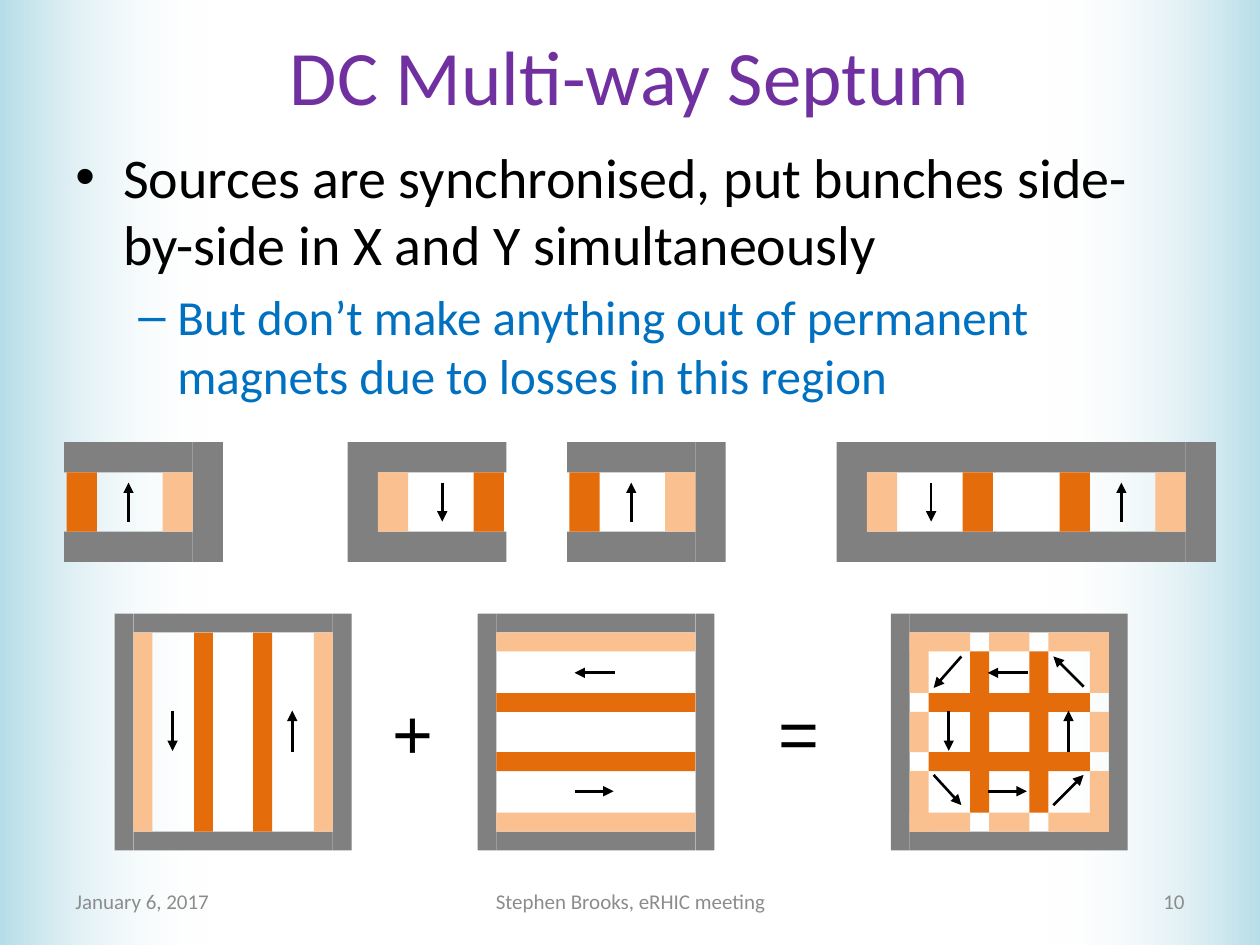
from dataclasses import dataclass

from lxml.etree import SubElement
from pptx import Presentation
from pptx.dml.color import RGBColor
from pptx.enum.shapes import MSO_CONNECTOR, MSO_SHAPE
from pptx.enum.text import MSO_ANCHOR, PP_ALIGN
from pptx.oxml.ns import qn
from pptx.util import Inches, Pt

COLORS = {
    "yoke": "808080", "septum": "E46C0A", "coil": "FAC090", "edge": "B7DEE8",
    "white": "FFFFFF", "black": "000000", "title": "7030A0", "sub": "0070C0",
    "footer": "8C8C8C",
}


@dataclass(frozen=True)
class Bar:
    x: float
    y: float
    w: float
    h: float
    color: str

    def mirrored(self, width: float) -> "Bar":
        return Bar(width - self.x - self.w, self.y, self.w, self.h, self.color)

    def transposed(self) -> "Bar":
        return Bar(self.y, self.x, self.h, self.w, self.color)


@dataclass(frozen=True)
class Arrow:
    x1: float
    y1: float
    x2: float
    y2: float


@dataclass(frozen=True)
class Label:
    x: float
    y: float
    w: float
    h: float
    text: str
    size: int
    color: str
    align: PP_ALIGN = PP_ALIGN.LEFT
    font: str = "Calibri"
    wrap: bool = True


@dataclass(frozen=True)
class Bullet:
    text: str
    char: str
    size: int
    color: str
    margin: float
    indent: float


MAGNET_W = 1.26
MAGNET_TOP = 3.51
MAGNET = [
    Bar(0, 0, 1.02, 0.24, "yoke"), Bar(0, 0.71, 1.02, 0.24, "yoke"),
    Bar(1.02, 0, 0.24, 0.95, "yoke"), Bar(0.02, 0.24, 0.24, 0.47, "septum"),
    Bar(0.78, 0.24, 0.24, 0.47, "coil"),
]
MAGNETS = [(0.51, False), (4.5, False), (2.76, True), (8.39, False), (6.64, True)]

T = 0.15
SIZE = 1.88
FRAME = [
    Bar(T, 0, SIZE - 2 * T, T, "yoke"), Bar(T, SIZE - T, SIZE - 2 * T, T, "yoke"),
    Bar(0, 0, T, SIZE, "yoke"), Bar(SIZE - T, 0, T, SIZE, "yoke"),
]
SEPTA = (0.63, 1.1)
COILS = (T, SIZE - 2 * T)
STRIPS = ([Bar(x, T, T, SIZE - 2 * T, "septum") for x in SEPTA]
          + [Bar(x, T, T, SIZE - 2 * T, "coil") for x in COILS])
CROSS = [Bar(x, 2 * T, T, SIZE - 4 * T, "septum") for x in SEPTA]
PADS = [Bar(x, y, T, h, "coil") for x in COILS
        for y, h in ((T, 0.48), (0.78, 0.32), (1.25, 0.48))]
GRID = CROSS + PADS

VERTICAL = [Arrow(0.46, 0.77, 0.46, 1.09), Arrow(1.41, 1.1, 1.41, 0.77)]
HORIZONTAL = [Arrow(1.09, 0.47, 0.77, 0.47), Arrow(0.77, 1.41, 1.08, 1.41)]
DIAGONAL = [
    Arrow(1.53, 0.58, 1.29, 0.34), Arrow(1.29, 1.52, 1.53, 1.28),
    Arrow(0.56, 0.34, 0.34, 0.59), Arrow(0.34, 1.28, 0.56, 1.52),
]
WINDOWS = [
    (0.91, STRIPS, VERTICAL),
    (3.79, [b.transposed() for b in STRIPS], HORIZONTAL),
    (7.07, GRID + [b.transposed() for b in GRID], VERTICAL + HORIZONTAL + DIAGONAL),
]
WINDOW_TOP = 4.87

LABELS = [
    Label(0.5, -0.03, 9, 1.25, "DC Multi-way Septum", 44, "title", PP_ALIGN.CENTER),
    Label(0.5, 6.95, 2.33, 0.4, "January 6, 2017", 12, "footer"),
    Label(3.42, 6.95, 3.17, 0.4, "Stephen Brooks, eRHIC meeting", 12, "footer",
          PP_ALIGN.CENTER),
    Label(7.17, 6.95, 2.33, 0.4, "10", 12, "footer", PP_ALIGN.RIGHT),
    Label(3.02, 5.42, 0.53, 0.77, "+", 40, "black", font="Arial", wrap=False),
    Label(6.08, 5.42, 0.53, 0.77, "=", 40, "black", font="Arial", wrap=False),
]
BULLETS = [
    Bullet("Sources are synchronised, put bunches side-by-side in X and Y simultaneously",
           "•", 32, "black", 0.38, -0.38),
    Bullet("But don’t make anything out of permanent magnets due to losses in this region",
           "–", 28, "sub", 0.81, -0.31),
]


def rgb(name: str) -> RGBColor:
    return RGBColor.from_string(COLORS[name])


def add_rect(s, x: float, y: float, w: float, h: float):
    sp = s.shapes.add_shape(MSO_SHAPE.RECTANGLE, Inches(x), Inches(y), Inches(w), Inches(h))
    sp.shadow.inherit = False
    sp.line.fill.background()
    return sp


def add_fade(s, x: float, rotation: int) -> None:
    sp = add_rect(s, x, 0, 1.69, 7.5)
    sp.rotation = rotation
    sp.fill.gradient()
    sp.fill.gradient_angle = 0
    for stop, name, position in zip(sp.fill.gradient_stops, ("edge", "white"), (0, 1)):
        stop.color.rgb = rgb(name)
        stop.position = position
    clear = sp.fill._xPr.findall(".//" + qn("a:srgbClr"))[-1]
    SubElement(clear, qn("a:alpha"), val="0")


def add_bars(s, left: float, top: float, bars: list[Bar]) -> None:
    for b in bars:
        sp = add_rect(s, left + b.x, top + b.y, b.w, b.h)
        sp.fill.solid()
        sp.fill.fore_color.rgb = rgb(b.color)


def add_arrows(s, left: float, top: float, arrows: list[Arrow]) -> None:
    for a in arrows:
        c = s.shapes.add_connector(
            MSO_CONNECTOR.STRAIGHT, Inches(left + a.x1), Inches(top + a.y1),
            Inches(left + a.x2), Inches(top + a.y2))
        c.line.color.rgb = rgb("black")
        c.line.width = Pt(1.5)
        SubElement(c.line._get_or_add_ln(), qn("a:tailEnd"), type="triangle")
        SubElement(c._element.spPr, qn("a:effectLst"))


def style_run(p, size: int, color: str, font: str = "Calibri") -> None:
    for r in p.runs:
        r.font.size = Pt(size)
        r.font.name = font
        r.font.color.rgb = rgb(color)


def add_label(s, d: Label) -> None:
    tf = s.shapes.add_textbox(Inches(d.x), Inches(d.y), Inches(d.w), Inches(d.h)).text_frame
    tf.word_wrap = d.wrap
    tf.vertical_anchor = MSO_ANCHOR.MIDDLE
    tf.text = d.text
    p = tf.paragraphs[0]
    p.alignment = d.align
    style_run(p, d.size, d.color, d.font)


def add_bullets(s, bullets: list[Bullet]) -> None:
    tf = s.shapes.add_textbox(Inches(0.5), Inches(1.08), Inches(9), Inches(4.95)).text_frame
    tf.word_wrap = True
    for level, b in enumerate(bullets):
        p = tf.add_paragraph() if level else tf.paragraphs[0]
        p.text = b.text
        p.level = level
        style_run(p, b.size, b.color)
        pPr = p._p.get_or_add_pPr()
        pPr.set("marL", str(Inches(b.margin)))
        pPr.set("indent", str(Inches(b.indent)))
        SubElement(SubElement(pPr, qn("a:spcBef")), qn("a:spcPct"), val="20000")
        SubElement(pPr, qn("a:buFont"), typeface="Arial")
        SubElement(pPr, qn("a:buChar"), char=b.char)


def main() -> None:
    prs = Presentation()
    prs.slide_width, prs.slide_height = Inches(10), Inches(7.5)
    s = prs.slides.add_slide(prs.slide_layouts[6])
    add_fade(s, 8.31, 180)
    add_fade(s, 0, 0)
    add_bullets(s, BULLETS)
    for d in LABELS:
        add_label(s, d)
    for left, flip in MAGNETS:
        add_bars(s, left, MAGNET_TOP, [b.mirrored(MAGNET_W) for b in MAGNET] if flip else MAGNET)
        arrow = Arrow(0.75, 0.32, 0.75, 0.63) if flip else Arrow(0.51, 0.63, 0.51, 0.32)
        add_arrows(s, left, MAGNET_TOP, [arrow])
    add_bars(s, 7.89, MAGNET_TOP, [Bar(0, y, 0.5, 0.24, "yoke") for y in (0, 0.71)])
    for left, bars, arrows in WINDOWS:
        add_bars(s, left, WINDOW_TOP, FRAME + bars)
        add_arrows(s, left, WINDOW_TOP, arrows)
    prs.save("out.pptx")


if __name__ == "__main__":
    main()
